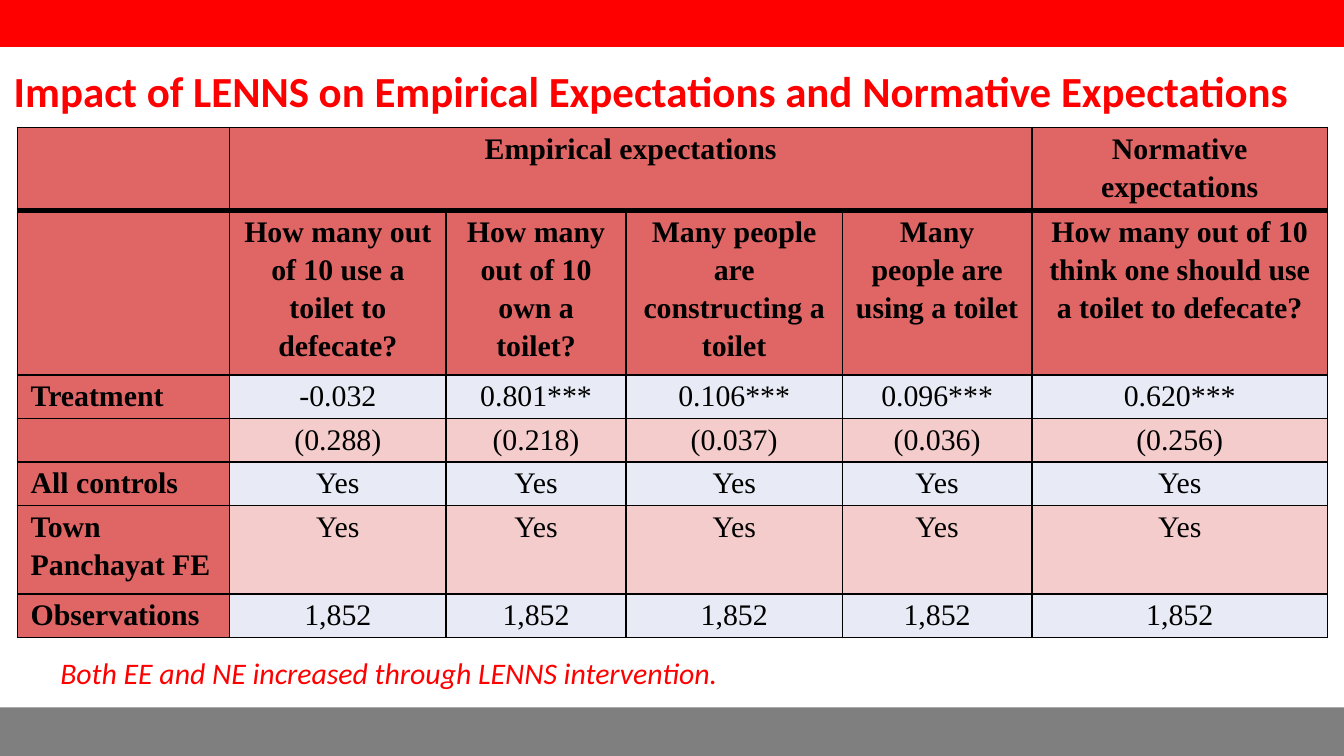
"""Build a slide with a regression table on empirical and normative expectations."""
import dataclasses

import lxml.etree
import pptx
import pptx.dml.color
import pptx.enum.shapes
import pptx.enum.text
import pptx.oxml.ns
import pptx.util

Cm = pptx.util.Cm
Pt = pptx.util.Pt
RGB = pptx.dml.color.RGBColor.from_string
qn = pptx.oxml.ns.qn
CENTER = pptx.enum.text.PP_ALIGN.CENTER
LEFT = pptx.enum.text.PP_ALIGN.LEFT


@dataclasses.dataclass(frozen=True)
class Theme:
    red: str = "FF0000"
    gray: str = "7F7F7F"
    black: str = "000000"
    header: str = "E06666"
    band_light: str = "E8EBF5"
    band_pink: str = "F4CCCC"
    sans: str = "Calibri"
    serif: str = "Times New Roman"
    title_size: float = 23
    body_size: float = 16


theme = Theme()


def write_text(frame, text, *, size=theme.body_size, font=theme.sans, color=theme.red,
               bold=False, italic=False, align=LEFT, spacing=1.0, margins=(0.25, 0.25)):
    frame.word_wrap = True
    frame.margin_left = frame.margin_right = Cm(margins[0])
    frame.margin_top = frame.margin_bottom = Cm(margins[1])
    paragraph = frame.paragraphs[0]
    paragraph.alignment = align
    paragraph.line_spacing = spacing
    if not text:
        lxml.etree.SubElement(paragraph._p, qn("a:endParaRPr"), sz=str(size * 100))
        return
    run = paragraph.add_run()
    run.text = text
    run.font.size = Pt(size)
    run.font.name = font
    run.font.bold = bold
    run.font.italic = italic
    run.font.color.rgb = RGB(color)


def set_borders(cell, widths):
    properties = cell._tc.get_or_add_tcPr()
    for position, (side, width) in enumerate(widths.items()):
        line = lxml.etree.Element(qn(f"a:ln{side}"), w=str(Pt(width)))
        fill = lxml.etree.SubElement(line, qn("a:solidFill"))
        lxml.etree.SubElement(fill, qn("a:srgbClr"), val=theme.black)
        properties.insert(position, line)


presentation = pptx.Presentation()
presentation.slide_width = Cm(25.4)
presentation.slide_height = Cm(14.29)
slide = presentation.slides.add_slide(presentation.slide_layouts[6])

for top, color in ((-0.03, theme.red), (13.37, theme.gray)):
    bar = slide.shapes.add_shape(pptx.enum.shapes.MSO_SHAPE.RECTANGLE,
                                 Cm(-0.05), Cm(top), Cm(25.5), Cm(0.92))
    bar.shadow.inherit = False
    bar.fill.solid()
    bar.fill.fore_color.rgb = RGB(color)
    bar.line.fill.background()

title = slide.shapes.add_textbox(Cm(0.08), Cm(1.12), Cm(25.27), Cm(1.93))
write_text(title.text_frame, "Impact of LENNS on Empirical Expectations and Normative Expectations",
           size=theme.title_size, bold=True, margins=(0.18, 0.1))

conclusion = slide.shapes.add_textbox(Cm(0.89), Cm(12.12), Cm(24.38), Cm(1.19))
write_text(conclusion.text_frame, "Both EE and NE increased through LENNS intervention.", italic=True)

rows = [
    ["", "Empirical expectations", "", "", "", "Normative expectations"],
    ["", "How many out of 10 use a toilet to defecate?", "How many out of 10 own a toilet?",
     "Many people are constructing a toilet", "Many people are using a toilet",
     "How many out of 10 think one should use a toilet to defecate?"],
    ["Treatment", "-0.032", "0.801***", "0.106***", "0.096***", "0.620***"],
    ["", "(0.288)", "(0.218)", "(0.037)", "(0.036)", "(0.256)"],
    ["All controls"] + ["Yes"] * 5,
    ["Town Panchayat FE"] + ["Yes"] * 5,
    ["Observations"] + ["1,852"] * 5,
]
column_widths = [4.01, 4.09, 3.4, 4.09, 3.58, 5.59]
row_heights = [1.57, 3.1, 0.82, 0.82, 0.82, 1.68, 0.82]
header_rows = 2

table = slide.shapes.add_table(len(rows), len(column_widths), Cm(0.33), Cm(2.41),
                               Cm(sum(column_widths)), Cm(sum(row_heights))).table
for column, width in zip(table.columns, column_widths):
    column.width = Cm(width)
for row, height in zip(table.rows, row_heights):
    row.height = Cm(height)
table.cell(0, 1).merge(table.cell(0, 4))

for row_index, texts in enumerate(rows):
    band = theme.band_pink if row_index % 2 else theme.band_light
    for column_index, text in enumerate(texts):
        cell = table.cell(row_index, column_index)
        heading = row_index < header_rows or column_index == 0
        cell.fill.solid()
        cell.fill.fore_color.rgb = RGB(theme.header if heading else band)
        set_borders(cell, {"L": 1, "R": 1, "T": 3 if row_index == 1 else 1,
                           "B": 3 if row_index == 0 else 1})
        cell.margin_left = cell.margin_right = Cm(0.25)
        cell.margin_top = cell.margin_bottom = 0
        write_text(cell.text_frame, text, font=theme.serif, color=theme.black, bold=heading,
                   align=CENTER if column_index else LEFT, spacing=1.15, margins=(0.25, 0))

presentation.save("out.pptx")
